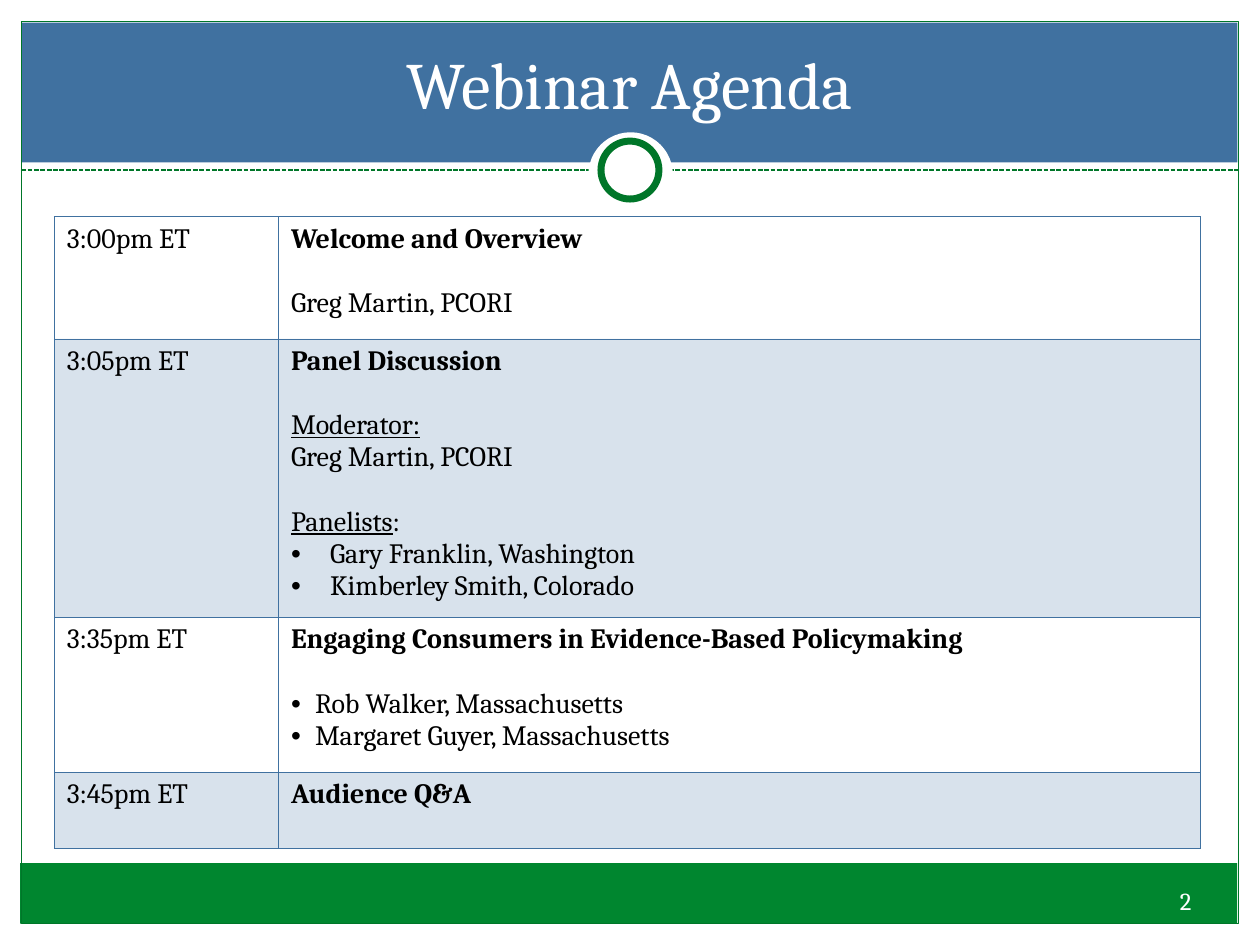
from lxml import etree
from pptx import Presentation
from pptx.dml.color import RGBColor
from pptx.enum.dml import MSO_LINE
from pptx.enum.shapes import MSO_CONNECTOR, MSO_SHAPE
from pptx.enum.text import MSO_ANCHOR, PP_ALIGN
from pptx.oxml.ns import qn
from pptx.util import Inches, Pt

RECT, OVAL = MSO_SHAPE.RECTANGLE, MSO_SHAPE.OVAL
STRAIGHT = MSO_CONNECTOR.STRAIGHT
DASH = MSO_LINE.SQUARE_DOT
CENTER = PP_ALIGN.CENTER
MIDDLE, BOTTOM = MSO_ANCHOR.MIDDLE, MSO_ANCHOR.BOTTOM

COLORS = {
    "white": "FFFFFF",
    "black": "000000",
    "blue": "4071A0",
    "footer": "00862F",
    "green": "007629",
}

BOLD, UNDERLINE, PLAIN = "bold", "underline", "plain"


def line(text, style=PLAIN, gap=False, indent=0):
    return [(text, style)], gap, indent


AGENDA = [
    ("3:00pm ET", 0.97, [
        line("Welcome and Overview", BOLD),
        line("Greg Martin, PCORI", gap=True),
    ]),
    ("3:05pm ET", 2.21, [
        line("Panel Discussion", BOLD),
        line("Moderator:", UNDERLINE, gap=True),
        line("Greg Martin, PCORI"),
        ([("Panelists", UNDERLINE), (":", PLAIN)], True, 0),
        line("Gary Franklin, Washington", indent=0.31),
        line("Kimberley Smith, Colorado", indent=0.31),
    ]),
    ("3:35pm ET", 1.23, [
        line("Engaging Consumers in Evidence-Based Policymaking", BOLD),
        line("Rob Walker, Massachusetts", gap=True, indent=0.19),
        line("Margaret Guyer, Massachusetts", indent=0.19),
    ]),
    ("3:45pm ET", 0.6, [line("Audience Q&A", BOLD)]),
]


class AgendaSlide:
    font = "Cambria"
    body_size = 16
    line_gap = 18.4

    def __init__(self, slide):
        self.slide = slide

    def color(self, name):
        return RGBColor.from_string(COLORS[name])

    def shape(self, kind, box, fill=None, outline=None, width=0.75):
        shape = self.slide.shapes.add_shape(kind, *map(Inches, box))
        shape.shadow.inherit = False
        if fill:
            shape.fill.solid()
            shape.fill.fore_color.rgb = self.color(fill)
        else:
            shape.fill.background()
        if outline:
            shape.line.color.rgb = self.color(outline)
            shape.line.width = Pt(width)
        else:
            shape.line.fill.background()

    def dashed_rule(self, left, right, y):
        rule = self.slide.shapes.add_connector(
            STRAIGHT, Inches(left), Inches(y), Inches(right), Inches(y))
        rule.line.color.rgb = self.color("green")
        rule.line.width = Pt(0.9)
        rule.line.dash_style = DASH
        etree.SubElement(rule._element.spPr, qn("a:effectLst"))

    def run(self, paragraph, text, size, color, style=PLAIN):
        run = paragraph.add_run()
        run.text = text
        run.font.name = self.font
        run.font.size = Pt(size)
        run.font.color.rgb = self.color(color)
        run.font.bold = style == BOLD
        run.font.underline = style == UNDERLINE

    def label(self, text, box, size, anchor, side_inset=0.1):
        frame = self.slide.shapes.add_textbox(*map(Inches, box)).text_frame
        frame.word_wrap = True
        frame.vertical_anchor = anchor
        frame.margin_left = frame.margin_right = Inches(side_inset)
        paragraph = frame.paragraphs[0]
        paragraph.alignment = CENTER
        self.run(paragraph, text, size, "white")

    def bullet(self, paragraph, indent):
        properties = paragraph._p.get_or_add_pPr()
        properties.set("marL", str(Inches(indent)))
        properties.set("indent", str(-Inches(indent)))
        etree.SubElement(properties, qn("a:buFont"), typeface="Arial")
        etree.SubElement(properties, qn("a:buChar"), char="•")

    def cell(self, cell, lines, shaded):
        properties = cell._tc.get_or_add_tcPr()
        for side in ("lnL", "lnR", "lnT", "lnB"):
            border = etree.SubElement(properties, qn(f"a:{side}"), w=str(Pt(0.5)))
            paint = etree.SubElement(border, qn("a:solidFill"))
            etree.SubElement(paint, qn("a:srgbClr"), val=COLORS["blue"])
        if shaded:
            cell.fill.solid()
            cell.fill.fore_color.rgb = self.color("blue")
            tint = properties.find(qn("a:solidFill")).find(qn("a:srgbClr"))
            etree.SubElement(tint, qn("a:alpha"), val="20000")
        else:
            cell.fill.background()
        frame = cell.text_frame
        for index, (runs, gap, indent) in enumerate(lines):
            paragraph = frame.add_paragraph() if index else frame.paragraphs[0]
            if gap:
                paragraph.space_before = Pt(self.line_gap)
            if indent:
                self.bullet(paragraph, indent)
            for text, style in runs:
                self.run(paragraph, text, self.body_size, "black", style)

    def agenda(self, left, top, widths, sessions):
        height = sum(session[1] for session in sessions)
        table = self.slide.shapes.add_table(
            len(sessions), len(widths), Inches(left), Inches(top),
            Inches(sum(widths)), Inches(height)).table
        table.first_row = table.horz_banding = False
        for column, width in zip(table.columns, widths):
            column.width = Inches(width)
        for row, (time, row_height, details) in enumerate(sessions):
            table.rows[row].height = Inches(row_height)
            for column, lines in enumerate(([line(time)], details)):
                self.cell(table.cell(row, column), lines, row % 2 == 1)


def main():
    presentation = Presentation()
    presentation.slide_width = Inches(10)
    presentation.slide_height = Inches(7.5)
    blank = presentation.slide_layouts[6]
    page = AgendaSlide(presentation.slides.add_slide(blank))

    page.shape(RECT, (0.17, 0.18, 9.65, 1.11), "blue")
    page.shape(RECT, (0.16, 6.85, 9.66, 0.48), "footer")
    page.shape(RECT, (0.17, 0.17, 9.66, 7.16), outline="green")
    page.dashed_rule(0.17, 9.83, 1.35)
    page.shape(OVAL, (4.67, 1.05, 0.67, 0.67), "white")
    page.shape(OVAL, (4.77, 1.12, 0.46, 0.46), "white", "green", 4)
    page.agenda(0.43, 1.72, (1.78, 7.32), AGENDA)
    page.label("Webinar Agenda", (0.82, 0.35, 8.35, 0.67), 37.8, BOTTOM)
    page.label("2", (9.16, 6.91, 0.5, 0.48), 14, MIDDLE, 0.05)

    presentation.save("out.pptx")


if __name__ == "__main__":
    main()
